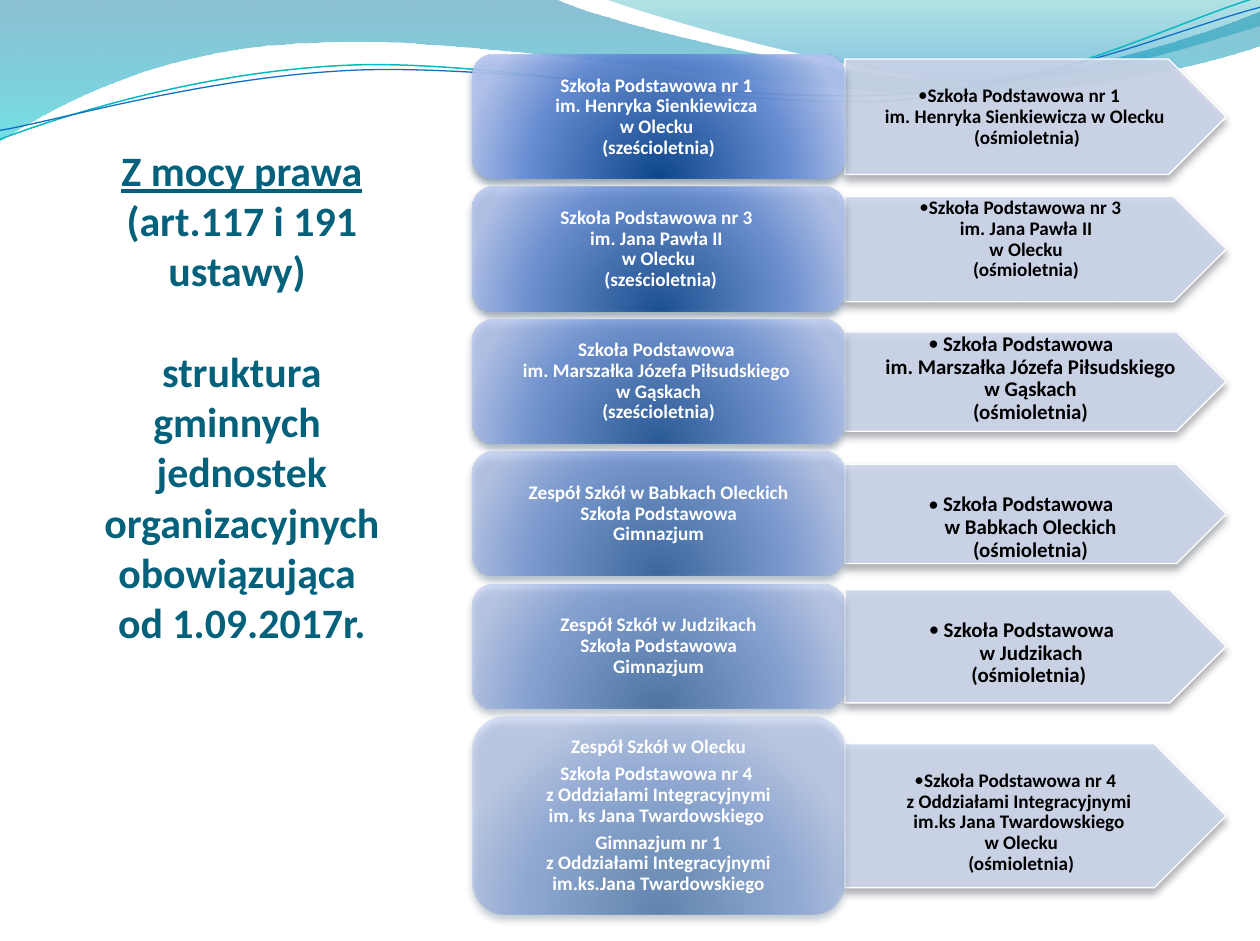
from lxml.etree import SubElement
from pptx import Presentation
from pptx.dml.color import RGBColor
from pptx.enum.shapes import MSO_SHAPE
from pptx.enum.text import MSO_ANCHOR, PP_ALIGN
from pptx.oxml.ns import qn
from pptx.util import Cm, Pt

WHITE = RGBColor(0xFF, 0xFF, 0xFF)
BLACK = RGBColor(0x00, 0x00, 0x00)
TITLE = RGBColor(0x04, 0x61, 0x7B)
WAVE_BLUE = RGBColor(0x00, 0x74, 0xA1)
WAVE_AQUA = RGBColor(0x00, 0xC6, 0xCF)
WAVE_TEAL = RGBColor(0x00, 0xA1, 0xA9)
WAVE_SKY = RGBColor(0x00, 0x8B, 0xBF)
LINE_TEAL = RGBColor(0x0A, 0xB8, 0xBF)
LINE_BLUE = RGBColor(0x0F, 0x6F, 0xC6)
BOX_DARK = RGBColor(0x00, 0x3D, 0x87)
BOX_MID = RGBColor(0x66, 0x8D, 0xD7)
BOX_LIGHT = RGBColor(0xB3, 0xC4, 0xEF)
BOX_SHADOW = RGBColor(0x04, 0x27, 0x47)
ARROW_FILL = RGBColor(0xCC, 0xD5, 0xEA)
ARROW_SHADOW = RGBColor(0x47, 0x4B, 0x53)

FONT = "Calibri"
LEFT, TOP, PITCH = 9.56, 1.11, 2.68
BOX_W, ARROW_W = 7.54, 7.72

BANDS = [
    ([(0, 0), (11.23, -0.03), (12.14, 0.43, 16.92, 1.6, 19.33, 1.6),
      (21.77, 1.6, 24.43, 0.66, 25.5, 0.23), (25.53, 0.91),
      (25.07, 1.12, 22.17, 1.93, 19.02, 1.9),
      (15.85, 1.9, 9.73, 0.71, 6.55, 0.86),
      (3.3, 0.91, 1.17, 2.11, -0.03, 2.87)],
     [(0, WAVE_BLUE, 45), (100, WAVE_AQUA, 55)]),
    ([(12.22, -0.03), (12.98, 0.28, 17.4, 1.57, 19.61, 1.65),
      (21.82, 1.75, 24.51, 0.81, 25.5, 0.53), (25.5, 0)],
     [(0, WAVE_TEAL, 30), (80, WAVE_SKY, 45)]),
]
WAVE_LINES = [
    ([(0, 2.82), (1.22, 2.36, 4.01, 1.45, 7.06, 1.32),
      (10.08, 1.19, 15.11, 2.26, 18.19, 2.03),
      (21.23, 1.8, 23.93, 0.38, 25.45, -0.05)], LINE_TEAL, 0.85),
    ([(0, 2.64), (1.19, 2.44, 4.17, 1.55, 7.21, 1.42),
      (10.26, 1.3, 15.24, 2.13, 18.29, 1.9),
      (21.34, 1.7, 24, 0.53, 25.5, 0.15)], LINE_BLUE, 0.75),
]
# (box height, box paragraphs, arrow height, arrow size, lowered text, arrow text)
SCHOOLS = [
    (2.51, ["Szkoła Podstawowa nr 1 \nim. Henryka Sienkiewicza \nw Olecku \n(sześcioletnia)"],
     2.34, 11, True,
     "Szkoła Podstawowa nr 1 \nim. Henryka Sienkiewicza w Olecku\n (ośmioletnia)"),
    (2.51, ["Szkoła Podstawowa nr 3 \nim. Jana Pawła II \nw Olecku\n (sześcioletnia)"],
     2.13, 11, False,
     "Szkoła Podstawowa nr 3 \nim. Jana Pawła II\nw Olecku\n(ośmioletnia)"),
    (2.51, ["Szkoła Podstawowa \nim. Marszałka Józefa Piłsudskiego \nw Gąskach\n(sześcioletnia)"],
     2.01, 12, False,
     "Szkoła Podstawowa \nim. Marszałka Józefa Piłsudskiego\nw Gąskach\n(ośmioletnia)"),
    (2.51, ["Zespół Szkół w Babkach Oleckich\nSzkoła Podstawowa\nGimnazjum"],
     2.01, 12, True, "Szkoła Podstawowa \nw Babkach Oleckich\n(ośmioletnia)"),
    (2.51, ["Zespół Szkół w Judzikach\nSzkoła Podstawowa\nGimnazjum"],
     2.29, 12, True, "Szkoła Podstawowa\n w Judzikach\n(ośmioletnia)"),
    (4.01, ["Zespół Szkół w Olecku",
            "Szkoła Podstawowa nr 4 \nz Oddziałami Integracyjnymi\nim. ks Jana Twardowskiego ",
            "Gimnazjum nr 1\nz Oddziałami Integracyjnymi\nim.ks.Jana Twardowskiego"],
     2.92, 11, True,
     "Szkoła Podstawowa nr 4 \nz Oddziałami Integracyjnymi \nim.ks Jana Twardowskiego \n"
     "w Olecku\n(ośmioletnia)"),
]


def add_xml(parent, tag, **attrs):
    """Append a child element with the given attributes."""
    child = SubElement(parent, qn(tag))
    for name, value in attrs.items():
        child.set(name, str(value))
    return child


def set_gradient(sp, stops, circle=False):
    """Fill a shape with a translucent vertical or circular gradient."""
    sp.fill.background()
    spPr = sp._element.spPr
    grad = add_xml(spPr, "a:gradFill", rotWithShape=1)
    spPr.replace(spPr.find(qn("a:noFill")), grad)
    gs_list = add_xml(grad, "a:gsLst")
    for pos, color, alpha in stops:
        gs = add_xml(gs_list, "a:gs", pos=pos * 1000)
        clr = add_xml(gs, "a:srgbClr", val=color)
        add_xml(clr, "a:alpha", val=alpha * 1000)
    if circle:
        way = add_xml(grad, "a:path", path="circle")
        add_xml(way, "a:fillToRect", l=50000, t=130000, r=50000, b=-30000)
    else:
        add_xml(grad, "a:lin", ang=5400000, scaled=1)


def set_shadow(sp, color):
    """Give a shape a soft shadow below it."""
    sp.shadow.inherit = False
    effects = sp._element.spPr.find(qn("a:effectLst"))
    shadow = add_xml(effects, "a:outerShdw", blurRad=Pt(4.5), dist=Pt(3),
                     dir=5400000, rotWithShape=0)
    add_xml(add_xml(shadow, "a:srgbClr", val=color), "a:alpha", val=48000)


def add_wave(s, segments, close):
    """Draw a freeform of lines and cubic curves without a shadow."""
    ends = [(Cm(seg[-2]), Cm(seg[-1])) for seg in segments]
    builder = s.shapes.build_freeform(*ends[0])
    builder.add_line_segments(ends[1:], close=close)
    sp = builder.convert_to_shape()
    sp.shadow.inherit = False
    sides = list(sp._element.spPr.iter(qn("a:lnTo")))
    for seg, side in zip(segments[1:], sides):
        if len(seg) == 6:
            outline = side.getparent()
            curve = add_xml(outline, "a:cubicBezTo")
            for x, y in zip(seg[::2], seg[1::2]):
                add_xml(curve, "a:pt", x=Cm(x) - sp.left, y=Cm(y) - sp.top)
            outline.replace(side, curve)
    return sp


def add_text(s, box, anchor, side=0, top=0, bottom=0):
    """Add a wrapping text box and return its text frame; lengths in centimetres."""
    tf = s.shapes.add_textbox(*[Cm(v) for v in box]).text_frame
    tf.word_wrap = True
    tf.vertical_anchor = anchor
    tf.margin_left = tf.margin_right = Cm(side)
    tf.margin_top, tf.margin_bottom = Cm(top), Cm(bottom)
    return tf


def add_lines(p, text, size, color):
    """Add centred bold lines to a paragraph, one run for each."""
    p.alignment = PP_ALIGN.CENTER
    for i, line in enumerate(text.split("\n")):
        if i:
            p.add_line_break()
        r = p.add_run()
        r.text = line
        r.font.name, r.font.size, r.font.bold = FONT, Pt(size), True
        r.font.color.rgb = color


def add_title(s):
    """Add the heading at the left."""
    tf = add_text(s, (1.35, 2.93, 7.09, 10.4), MSO_ANCHOR.TOP)
    p = tf.paragraphs[0]
    add_lines(p, "Z mocy prawa\n(art.117 i 191 ustawy) ", 24, TITLE)
    p.runs[0].font.underline = True
    p = tf.add_paragraph()
    p.space_before = Pt(29)
    add_lines(p, "struktura\ngminnych \njednostek organizacyjnych\nobowiązująca \n"
                 "od 1.09.2017r.", 24, TITLE)


def add_arrow(s, middle, height, size, lowered, text):
    """Add the arrow that names the new school."""
    left, top = LEFT + BOX_W, middle - height / 2
    sp = s.shapes.add_shape(MSO_SHAPE.PENTAGON, Cm(left), Cm(top), Cm(ARROW_W), Cm(height))
    sp.fill.solid()
    sp.fill.fore_color.rgb = ARROW_FILL
    add_xml(sp._element.spPr.find(qn("a:solidFill"))[0], "a:alpha", val=90000)
    sp.line.color.rgb = WHITE
    sp.line.width = Pt(0.75)
    set_shadow(sp, ARROW_SHADOW)
    tf = add_text(s, (left, top, ARROW_W - height / 4, height), MSO_ANCHOR.TOP,
                  0.03, 0.05 * size if lowered else 0.03, 0.03)
    p = tf.paragraphs[0]
    add_lines(p, text, size, BLACK)
    p.line_spacing = 0.9
    indent = Cm(0.15 if size == 11 else 0.3)
    pPr = p._p.get_or_add_pPr()
    pPr.set("marL", str(indent))
    pPr.set("indent", str(-indent))
    add_xml(pPr, "a:buFont", typeface=FONT)
    add_xml(pPr, "a:buChar", char="•")


def add_box(s, top, height, alpha, paragraphs):
    """Add the rounded box that names the present school."""
    sp = s.shapes.add_shape(MSO_SHAPE.ROUNDED_RECTANGLE, Cm(LEFT), Cm(top),
                            Cm(BOX_W), Cm(height))
    stops = [(0, BOX_DARK, alpha), (68, BOX_MID, alpha), (100, BOX_LIGHT, alpha)]
    set_gradient(sp, stops, circle=True)
    sp.line.fill.background()
    set_shadow(sp, BOX_SHADOW)
    gap = 0.05 * height
    tf = add_text(s, (LEFT + gap, top + gap, BOX_W - 2 * gap, height - 2 * gap),
                  MSO_ANCHOR.MIDDLE, 0.13, 0.05, 0.05)
    for i, text in enumerate(paragraphs):
        p = tf.add_paragraph() if i else tf.paragraphs[0]
        add_lines(p, text, 11, WHITE)
        p.line_spacing = 0.9
        p.space_after = Pt(3.6)


def main():
    """Build the slide and save it."""
    prs = Presentation()
    prs.slide_width, prs.slide_height = Cm(25.5), Cm(19.05)
    s = prs.slides.add_slide(prs.slide_layouts[6])
    for segments, stops in BANDS:
        sp = add_wave(s, segments, True)
        set_gradient(sp, stops)
        sp.line.fill.background()
    for segments, color, width in WAVE_LINES:
        sp = add_wave(s, segments, False)
        sp.fill.background()
        sp.line.color.rgb = color
        sp.line.width = Pt(width)
    add_title(s)
    for i, (height, paragraphs, *arrow) in enumerate(SCHOOLS):
        top = TOP + PITCH * i
        add_arrow(s, top + height / 2, *arrow)
        add_box(s, top, height, 90 - 8 * i, paragraphs)
    prs.save("out.pptx")


if __name__ == "__main__":
    main()
